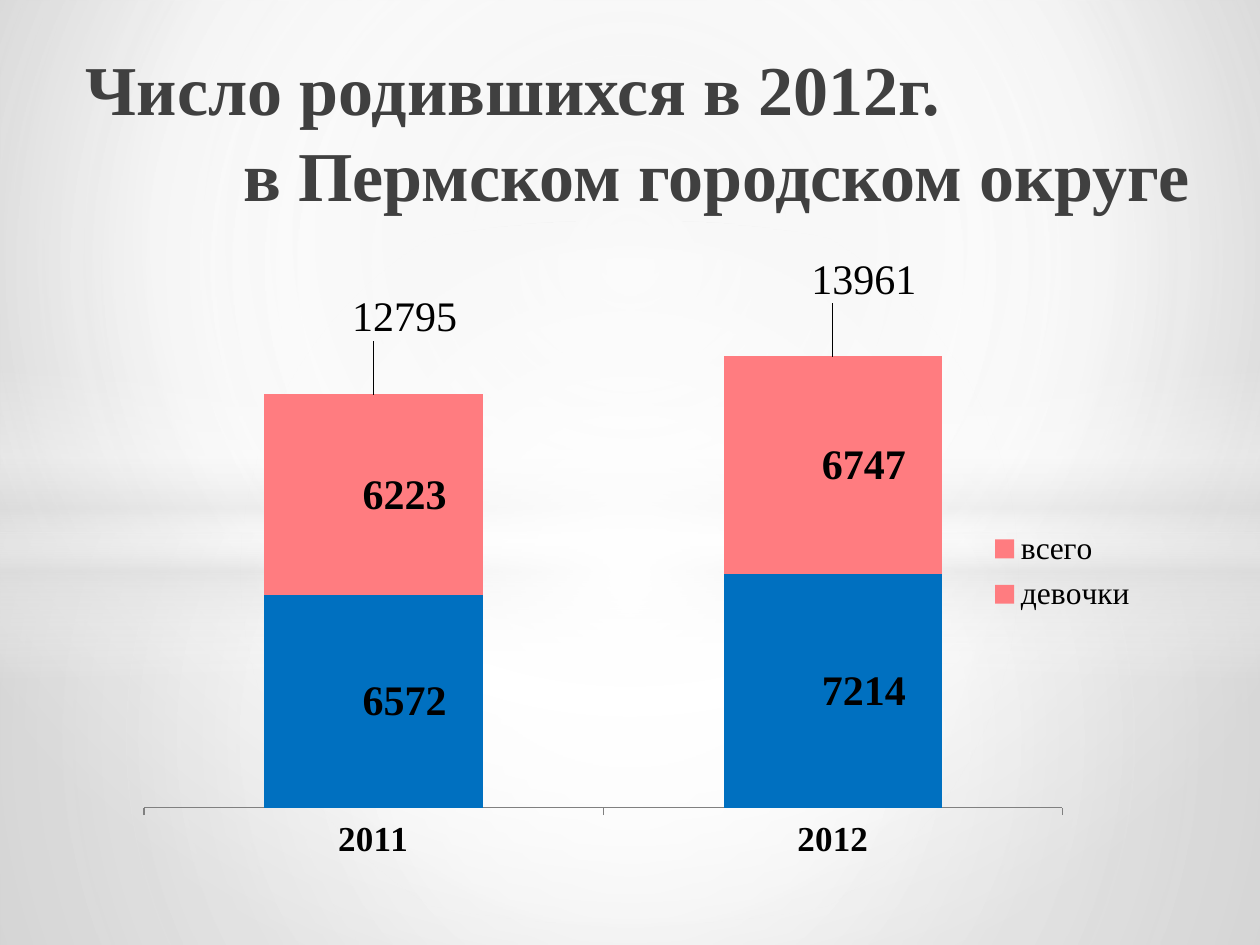
import dataclasses

import pptx
import pptx.chart.data
import pptx.dml.color
import pptx.enum.chart
import pptx.enum.shapes
import pptx.enum.text
import pptx.oxml
import pptx.oxml.ns
import pptx.util

Inches = pptx.util.Inches
Pt = pptx.util.Pt
RGB = pptx.dml.color.RGBColor.from_string
SHAPE = pptx.enum.shapes.MSO_SHAPE


@dataclasses.dataclass(frozen=True)
class Theme:
    font: str = "Times New Roman"
    title: str = "404040"
    text: str = "000000"
    axis: str = "808080"
    boys: str = "0070C0"
    girls: str = "FF7C80"
    light: str = "FFFFFF"
    shade: str = "DEDEDE"
    edge: str = "D5D5D5"
    dark: str = "B2B2B2"
    title_size: int = 40
    label_size: int = 24
    axis_size: int = 20
    legend_size: int = 18


class Deck:
    """Builds slide elements in one shared style."""

    def __init__(self, theme):
        self.theme = theme
        self.prs = pptx.Presentation()
        self.prs.slide_width, self.prs.slide_height = Inches(10), Inches(7.5)
        self.s = self.prs.slides.add_slide(self.prs.slide_layouts[5])

    def gradient(self, stops, focus=None):
        gs = "".join(
            f'<a:gs pos="{pos * 1000}"><a:srgbClr val="{color}">'
            f'<a:alpha val="{alpha * 1000}"/></a:srgbClr></a:gs>'
            for pos, color, alpha in stops)
        if focus:
            l, t, r, b = (v * 1000 for v in focus)
            course = (f'<a:path path="circle"><a:fillToRect l="{l}" t="{t}" '
                      f'r="{r}" b="{b}"/></a:path>')
        else:
            course = '<a:lin ang="5400000" scaled="0"/>'
        return pptx.oxml.parse_xml(
            f'<a:gradFill {pptx.oxml.ns.nsdecls("a")} rotWithShape="1">'
            f'<a:gsLst>{gs}</a:gsLst>{course}</a:gradFill>')

    def fill_gradient(self, fill, element, stops, focus):
        fill.solid()
        solid = element.xpath(".//p:bgPr/a:solidFill | ./p:spPr/a:solidFill")[0]
        solid.getparent().replace(solid, self.gradient(stops, focus))

    def background(self, stops, focus):
        self.fill_gradient(self.s.background.fill, self.s.element, stops, focus)

    def glow(self, kind, top, height, stops, focus=None):
        sp = self.s.shapes.add_shape(
            kind, 0, Inches(top), self.prs.slide_width, Inches(height))
        sp.shadow.inherit = False
        sp.line.fill.background()
        self.fill_gradient(sp.fill, sp.element, stops, focus)

    def title(self, box, lines):
        sp = self.s.shapes.title
        sp.left, sp.top, sp.width, sp.height = map(Inches, box)
        sp.element.getparent().append(sp.element)
        tf = sp.text_frame
        tf.word_wrap = True
        tf.auto_size = pptx.enum.text.MSO_AUTO_SIZE.NONE
        tf.vertical_anchor = pptx.enum.text.MSO_ANCHOR.TOP
        for i, (text, indent) in enumerate(lines):
            p = tf.add_paragraph() if i else tf.paragraphs[0]
            p.alignment = pptx.enum.text.PP_ALIGN.LEFT
            p.space_before = Pt(0)
            p.line_spacing = 1.03
            pPr = p._p.get_or_add_pPr()
            pPr.set("marL", str(Inches(indent)))
            pPr.set("indent", "0")
            r = p.add_run()
            r.text = text
            self.style(r.font, self.theme.title_size, True, self.theme.title)

    def style(self, font, size, bold=False, color=None):
        font.name = self.theme.font
        font.size = Pt(size)
        font.bold = bold
        font.color.rgb = RGB(color or self.theme.text)

    def layout(self, inner=False, **sizes):
        target = '<c:layoutTarget val="inner"/>' if inner else ""
        modes = "".join(f'<c:{k}Mode val="edge"/>' for k in "xy" if "w" in sizes)
        values = "".join(f'<c:{k} val="{v}"/>' for k, v in sizes.items())
        return pptx.oxml.parse_xml(
            f'<c:layout {pptx.oxml.ns.nsdecls("c")}><c:manualLayout>'
            f'{target}{modes}{values}</c:manualLayout></c:layout>')

    def stacked_chart(self, box, cats, series, totals):
        data = pptx.chart.data.CategoryChartData()
        data.categories = cats
        for name, values, _ in series:
            data.add_series(name, values)
        kinds = pptx.enum.chart.XL_CHART_TYPE
        chart = self.s.shapes.add_chart(
            kinds.COLUMN_STACKED, *map(Inches, box), data).chart
        self.style(chart.font, self.theme.legend_size)
        chart.has_title = False
        plot = chart.plots[0]
        plot.gap_width, plot.overlap, plot.vary_by_categories = 110, 100, False
        for ser, (_, _, color) in zip(plot.series, series):
            ser.format.fill.solid()
            ser.format.fill.fore_color.rgb = RGB(color)
            for i in range(len(cats)):
                self.style(ser.points[i].data_label.font,
                           self.theme.label_size, True)
        for i, total in enumerate(totals):
            p = plot.series[-1].points[i].data_label.text_frame.paragraphs[0]
            r = p.add_run()
            r.text = total
            self.style(r.font, self.theme.label_size)
        for ser in plot.series:
            rise = -0.12 if ser.name == series[-1][0] else 0
            for idx in ser._element.xpath("./c:dLbls/c:dLbl/c:idx"):
                idx.addnext(self.layout(x=0.03, y=rise))
        self.axes(chart)
        self.legend(chart)
        area = chart._chartSpace.xpath("./c:chart/c:plotArea")[0]
        for old in area.xpath("./c:layout"):
            area.remove(old)
        area.insert(0, self.layout(inner=True, x=0.02, y=0.08, w=0.89, h=0.81))

    def axes(self, chart):
        value = chart.value_axis
        value.minimum_scale, value.maximum_scale = 0, 16000
        value.has_major_gridlines = False
        value.visible = False
        cat = chart.category_axis
        cat.major_tick_mark = pptx.enum.chart.XL_TICK_MARK.OUTSIDE
        cat.format.line.color.rgb = RGB(self.theme.axis)
        self.style(cat.tick_labels.font, self.theme.axis_size, True)

    def legend(self, chart):
        chart.has_legend = True
        legend = chart.legend
        legend.position = pptx.enum.chart.XL_LEGEND_POSITION.RIGHT
        legend.include_in_layout = False
        self.style(legend.font, self.theme.legend_size)
        element = legend._element
        for old in element.xpath("./c:layout"):
            element.remove(old)
        pos = element.xpath("./c:legendPos")[0]
        pos.addnext(self.layout(x=0.83, y=0.44, w=0.16, h=0.16))
        pos.addnext(pptx.oxml.parse_xml(
            f'<c:legendEntry {pptx.oxml.ns.nsdecls("c")}>'
            '<c:idx val="0"/><c:delete val="1"/></c:legendEntry>'))


def main():
    t = Theme()
    deck = Deck(t)
    center = (50, 50, 50, 50)
    deck.background([(0, t.edge, 100), (60, t.light, 100), (100, t.dark, 100)],
                    (20, 10, 20, 60))
    deck.glow(SHAPE.RECTANGLE, 4.23, 3.27,
              [(0, t.light, 91), (37, t.light, 76), (100, t.shade, 79)], center)
    deck.glow(SHAPE.RECTANGLE, 0, 4.23,
              [(0, t.light, 89), (48, t.light, 62), (100, t.shade, 79)], center)
    deck.glow(SHAPE.RECTANGLE, 2.9, 2.5,
              [(0, t.light, 0), (29, t.light, 30), (45, t.shade, 40),
               (55, t.light, 26), (65, t.shade, 60), (100, t.light, 0)])
    deck.glow(SHAPE.OVAL, 1.75, 5.58,
              [(0, t.light, 100), (54, t.light, 0)], center)
    deck.title((0.38, 0.29, 9.29, 1.57),
               [("Число родившихся в 2012г.", 0.2),
                ("в Пермском городском округе", 1.45)])
    deck.stacked_chart((0.98, 1.9, 8.19, 5.07), ["2011", "2012"],
                       [("Series 1", (6572, 7214), t.boys),
                        ("девочки", (6223, 6747), t.girls),
                        ("всего", (1, 1), t.girls)],
                       ["12795", "13961"])
    deck.prs.save("out.pptx")


if __name__ == "__main__":
    main()
